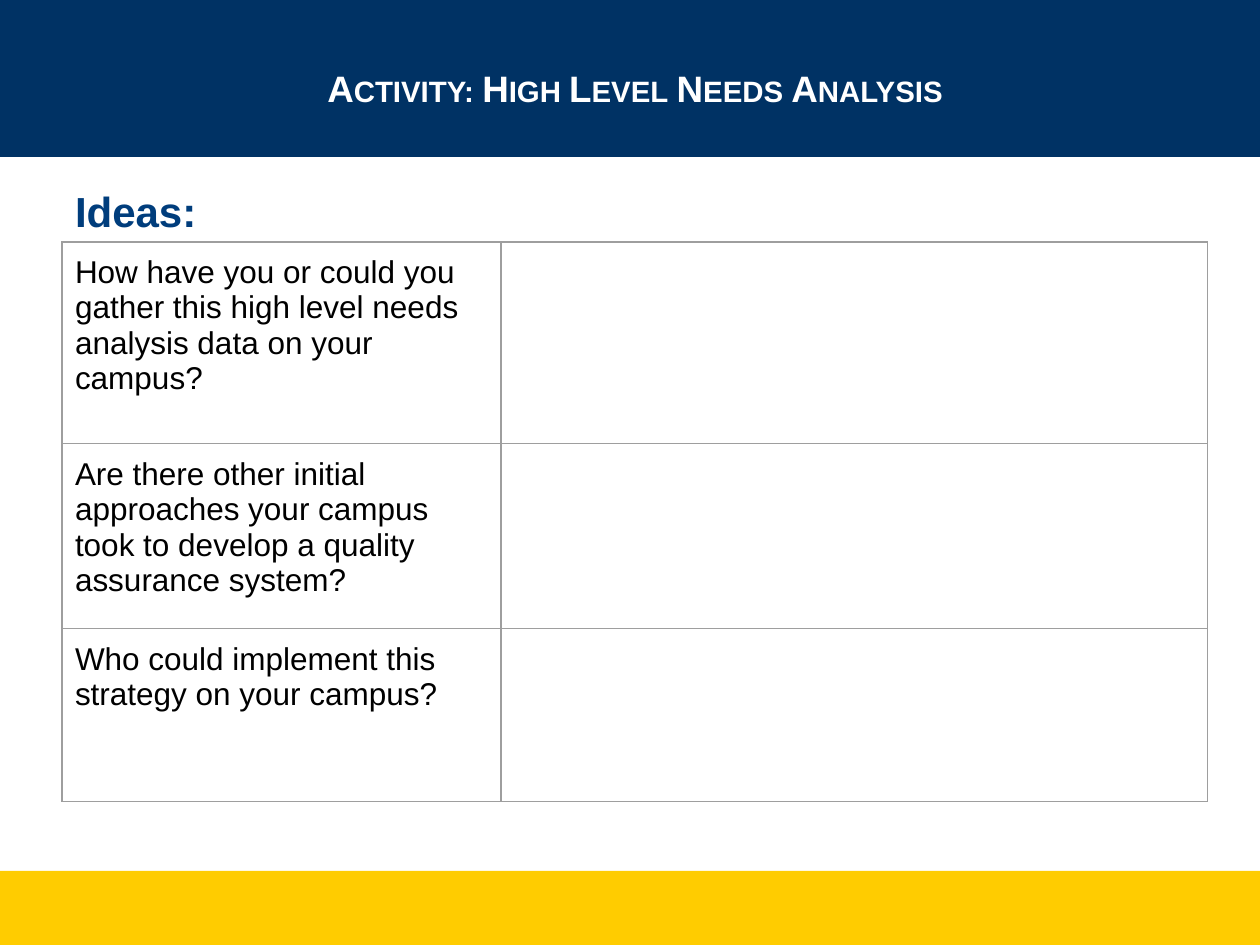
from lxml import etree
from pptx import Presentation
from pptx.dml.color import RGBColor
from pptx.enum.shapes import MSO_SHAPE
from pptx.enum.text import MSO_ANCHOR, PP_ALIGN
from pptx.oxml.ns import qn
from pptx.util import Pt

RECTANGLE = MSO_SHAPE.RECTANGLE
TOP, MIDDLE = MSO_ANCHOR.TOP, MSO_ANCHOR.MIDDLE
LEFT, CENTER = PP_ALIGN.LEFT, PP_ALIGN.CENTER

PX = 914400 // 126
INSET = 13 * PX
THEME = {
    "font": "Arial",
    "navy": "003264", "gold": "FFCC00", "heading": "003D7C",
    "white": "FFFFFF", "black": "000000", "border": "9E9E9E",
    "title_size": 21, "heading_size": 24, "cell_size": 18, "border_width": 0.75,
}


def write_text(frame, text, size, color, bold=False, align=LEFT,
               space_before=0, small_caps=False):
    frame.word_wrap = True
    paragraph = frame.paragraphs[0]
    paragraph.alignment = align
    paragraph.space_before = Pt(space_before)
    run = paragraph.add_run()
    run.text = text
    run.font.name = THEME["font"]
    run.font.size = Pt(THEME[size])
    run.font.bold = bold
    run.font.color.rgb = RGBColor.from_string(THEME[color])
    if small_caps:
        run._r.get_or_add_rPr().set("cap", "small")


def add_borders(cell):
    properties = cell._tc.get_or_add_tcPr()
    for index, side in enumerate(("a:lnL", "a:lnR", "a:lnT", "a:lnB")):
        line = etree.Element(qn(side), w=str(Pt(THEME["border_width"])))
        fill = etree.SubElement(line, qn("a:solidFill"))
        etree.SubElement(fill, qn("a:srgbClr"), val=THEME["border"])
        properties.insert(index, line)


presentation = Presentation()
presentation.slide_width = 1260 * PX
presentation.slide_height = 945 * PX
slide = presentation.slides.add_slide(presentation.slide_layouts[6])

# Header and footer bands
for top, height, color in ((0, 157, "navy"), (871, 74, "gold")):
    band = slide.shapes.add_shape(RECTANGLE, 0, top * PX, 1260 * PX, height * PX)
    band.shadow.inherit = False
    band.fill.solid()
    band.fill.fore_color.rgb = RGBColor.from_string(THEME[color])
    band.line.fill.background()

# Title and heading
texts = (
    (20, 136, MIDDLE, "Activity: High Level Needs Analysis",
     dict(size="title_size", color="white", bold=True, align=CENTER, small_caps=True)),
    (173, 69, TOP, "Ideas:",
     dict(size="heading_size", color="heading", bold=True)),
)
for top, height, anchor, text, text_format in texts:
    box = slide.shapes.add_textbox(62 * PX, top * PX, 1146 * PX, height * PX)
    frame = box.text_frame
    frame.margin_left = frame.margin_right = INSET
    frame.margin_top = frame.margin_bottom = INSET
    frame.vertical_anchor = anchor
    write_text(frame, text, **text_format)

# Question table with empty answer column
questions = (
    ("How have you or could you gather this high level needs analysis data on your campus?", 202),
    ("Are there other initial approaches your campus took to develop a quality assurance system?", 185),
    ("Who could implement this strategy on your campus?", 173),
)
table = slide.shapes.add_table(
    len(questions), 2, 62 * PX, 242 * PX, 1146 * PX, 560 * PX).table
table.first_row = table.horz_banding = False
for column, width in zip(table.columns, (439, 707)):
    column.width = width * PX
for row, (question, height) in zip(table.rows, questions):
    row.height = height * PX
    for cell in row.cells:
        cell.margin_left = cell.margin_right = INSET
        cell.margin_top = cell.margin_bottom = INSET
        cell.vertical_anchor = TOP
        cell.fill.background()
        add_borders(cell)
    write_text(row.cells[0].text_frame, question, size="cell_size",
               color="black", space_before=3.6)

presentation.save("out.pptx")
